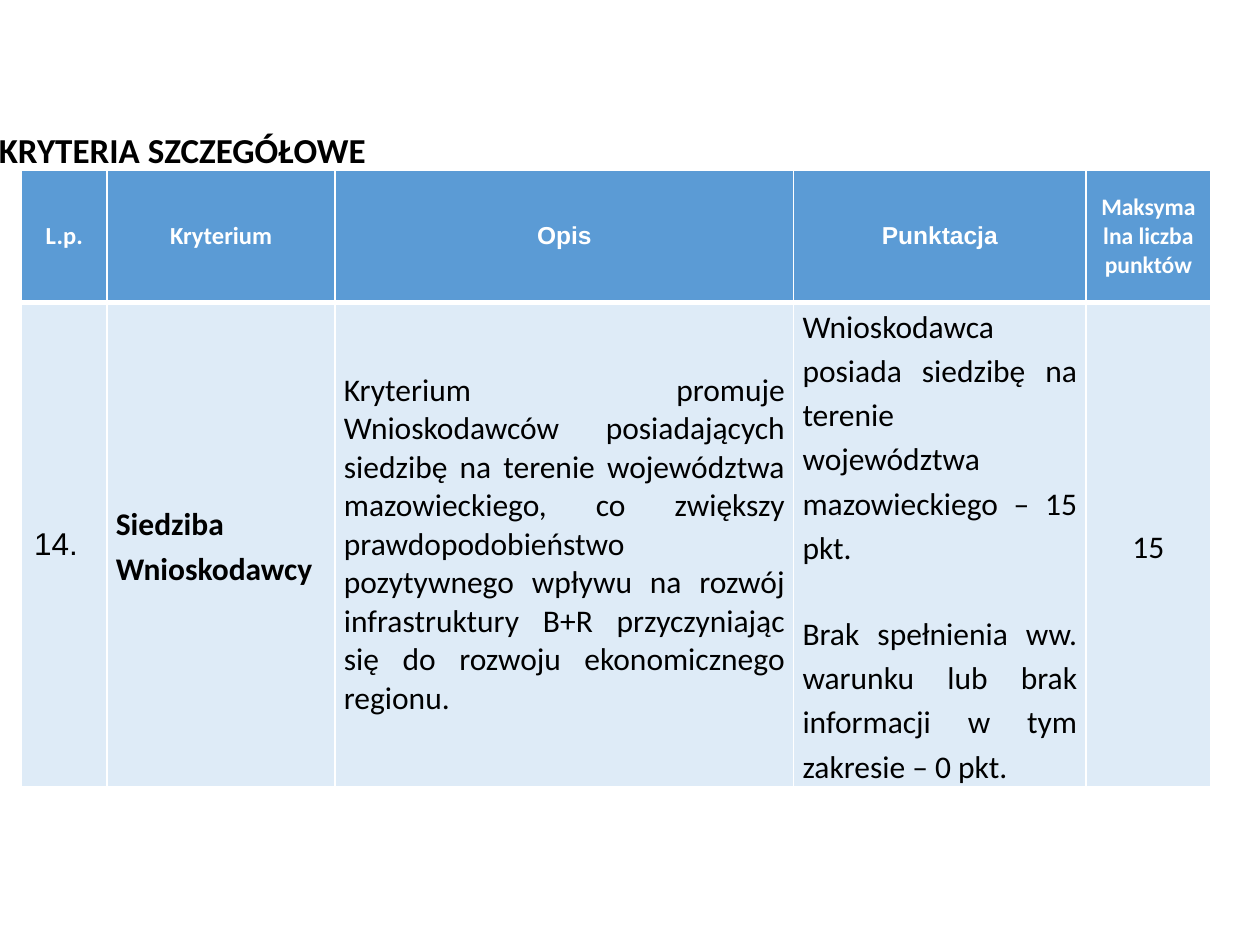
from dataclasses import dataclass

from lxml import etree
from pptx import Presentation
from pptx.dml.color import RGBColor
from pptx.enum.text import MSO_ANCHOR, PP_ALIGN
from pptx.oxml.ns import qn
from pptx.util import Inches, Pt

LEFT, CENTER, JUST = PP_ALIGN.LEFT, PP_ALIGN.CENTER, PP_ALIGN.JUSTIFY
MIDDLE = MSO_ANCHOR.MIDDLE


@dataclass(frozen=True)
class Theme:
    black: str = "000000"
    white: str = "FFFFFF"
    blue: str = "5B9BD5"
    pale: str = "DEEBF7"
    sans: str = "Calibri"
    alt: str = "Arial"
    title: float = 20
    head: float = 14
    small: float = 13.5
    body: float = 18
    thin: float = 1
    thick: float = 3


THEME = Theme()


@dataclass(frozen=True)
class Entry:
    lines: tuple[str, ...]
    size: float = THEME.body
    face: str = THEME.sans
    color: str = THEME.black
    bold: bool = False
    align: PP_ALIGN = JUST
    pitch: float = 1.15
    gap: float = 0
    tight: bool = True


def head(text: str, face: str = THEME.sans, size: float = THEME.head) -> Entry:
    return Entry((text,), size, face, THEME.white, True, CENTER, 1, tight=False)


WIDTHS = (0.68, 1.81, 3.64, 2.32, 0.99)
HEIGHTS = (1.05, 3.76)
HEADS = (
    head("L.p."),
    head("Kryterium"),
    head("Opis", THEME.alt),
    head("Punktacja", THEME.alt),
    head("Maksymalna liczba punktów", size=THEME.small),
)
ITEMS = (
    Entry(("14.",), face=THEME.alt, align=LEFT, pitch=1, tight=False),
    Entry(("Siedziba Wnioskodawcy",), bold=True),
    Entry((
        "Kryterium promuje Wnioskodawców posiadających siedzibę na terenie "
        "województwa mazowieckiego, co zwiększy prawdopodobieństwo pozytywnego "
        "wpływu na rozwój infrastruktury B+R przyczyniając się do rozwoju "
        "ekonomicznego regionu.",
    ), pitch=1),
    Entry((
        "Wnioskodawca posiada siedzibę na terenie województwa "
        "mazowieckiego – 15 pkt.",
        "Brak spełnienia ww. warunku lub brak informacji w tym "
        "zakresie – 0 pkt.",
    ), gap=24),
    Entry(("15",), align=CENTER),
)


def write(frame, entry: Entry) -> None:
    for i, line in enumerate(entry.lines):
        para = frame.add_paragraph() if i else frame.paragraphs[0]
        para.text = line
        para.alignment = entry.align
        para.line_spacing = entry.pitch
        para.space_before = Pt(entry.gap if i else 0)
        font = para.font
        font.name, font.size, font.bold = entry.face, Pt(entry.size), entry.bold
        font.color.rgb = RGBColor.from_string(entry.color)


def rule(cell, side: str, width: float) -> None:
    """Draw one white border; call before the cell gets its fill."""
    props = cell._tc.get_or_add_tcPr()
    line = etree.SubElement(props, qn(f"a:ln{side}"), w=str(Pt(width)))
    fill = etree.SubElement(line, qn("a:solidFill"))
    etree.SubElement(fill, qn("a:srgbClr"), val=THEME.white)


def fill_row(table, row: int, items: tuple[Entry, ...], color: str) -> None:
    top, base = (THEME.thick, THEME.thin) if row else (THEME.thin, THEME.thick)
    edges = {"L": THEME.thin, "R": THEME.thin, "T": top, "B": base}
    for col, entry in enumerate(items):
        cell = table.cell(row, col)
        for side, width in edges.items():
            rule(cell, side, width)
        cell.fill.solid()
        cell.fill.fore_color.rgb = RGBColor.from_string(color)
        cell.vertical_anchor = MIDDLE
        if entry.tight:
            cell.margin_left = cell.margin_right = Inches(0.07)
            cell.margin_top = cell.margin_bottom = 0
        write(cell.text_frame, entry)


def add_title(slide) -> None:
    title = slide.shapes.title
    title.left, title.top = Inches(-0.11), Inches(0.4)
    title.width, title.height = Inches(9.31), Inches(1.61)
    title.text_frame.vertical_anchor = MIDDLE
    write(title.text_frame, Entry(("KRYTERIA SZCZEGÓŁOWE",), THEME.title,
                                  bold=True, align=LEFT, pitch=0.9))


def add_grid(slide) -> None:
    table = slide.shapes.add_table(
        len(HEIGHTS), len(WIDTHS), Inches(0.17), Inches(1.35),
        Inches(sum(WIDTHS)), Inches(sum(HEIGHTS))).table
    for col, width in zip(table.columns, WIDTHS):
        col.width = Inches(width)
    for row, height in zip(table.rows, HEIGHTS):
        row.height = Inches(height)
    fill_row(table, 0, HEADS, THEME.blue)
    fill_row(table, 1, ITEMS, THEME.pale)


def main() -> None:
    deck = Presentation()
    deck.slide_width, deck.slide_height = Inches(10), Inches(7.5)
    slide = deck.slides.add_slide(deck.slide_layouts.get_by_name("Title Only"))
    add_title(slide)
    add_grid(slide)
    deck.save("out.pptx")


if __name__ == "__main__":
    main()
